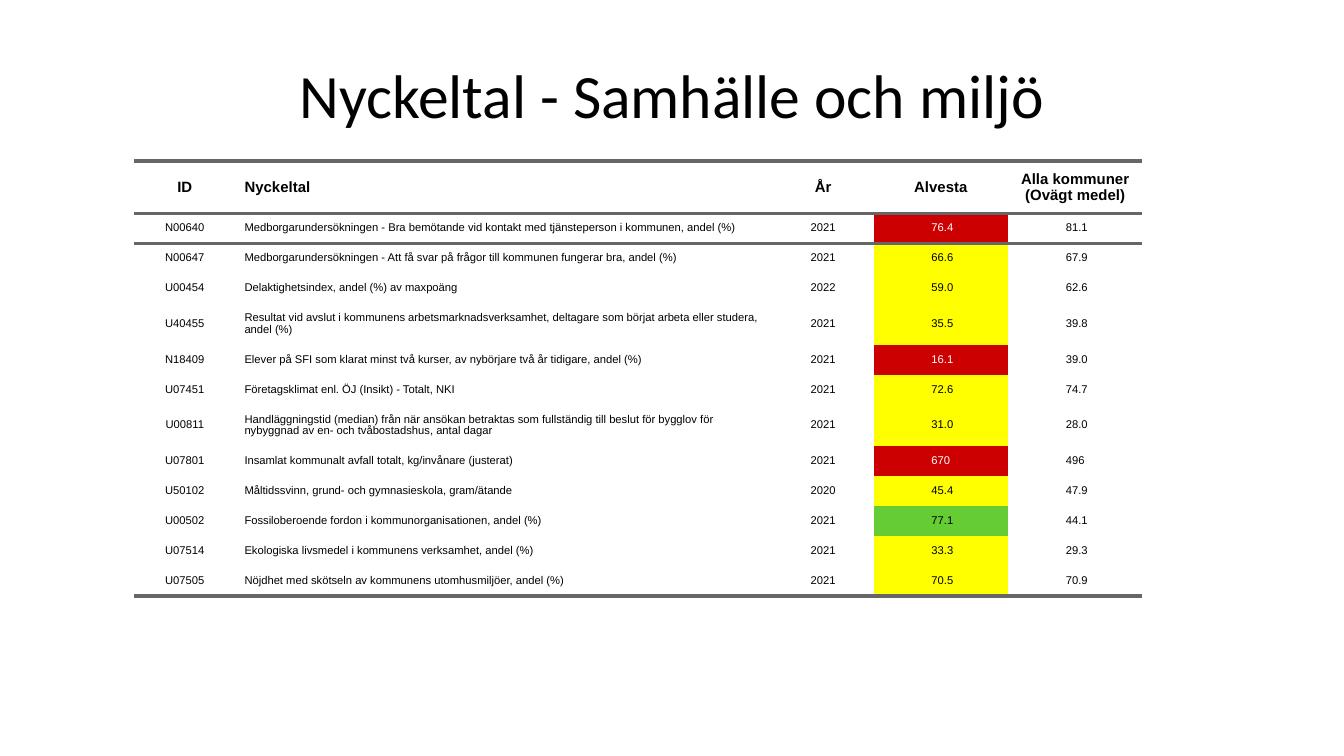
from lxml import etree
from pptx import Presentation
from pptx import util as u
from pptx.dml.color import RGBColor
from pptx.enum import text
from pptx.oxml import ns

PX = 9525  # EMU, 96 px to the inch
BLACK, WHITE, GRAY = "000000", "FFFFFF", "666666"
RED, YELLOW, GREEN = "CC0000", "FFFF00", "66CC33"
PADDING = u.Pt(5)
NO_STYLE_NO_GRID = "{2D5ABB26-0587-4C30-8999-92F81FD0307C}"

COLUMN_WIDTHS = [72, 384, 72, 96, 96]
NAME_COLUMN, RATED_COLUMN = 1, 3
HEADER_HEIGHT, ROW_HEIGHT, TALL_ROW_HEIGHT = 37, 21, 29
LINE_LENGTH = 100  # longer names take two lines

HEADER = ["ID", "Nyckeltal", "År", "Alvesta", "Alla kommuner (Ovägt medel)"]
INDICATORS = [
    ("N00640", "Medborgarundersökningen - Bra bemötande vid kontakt med tjänsteperson i kommunen, andel (%)",
     "2021", " 76.4", " 81.1", RED),
    ("N00647", "Medborgarundersökningen - Att få svar på frågor till kommunen fungerar bra, andel (%)",
     "2021", " 66.6", " 67.9", YELLOW),
    ("U00454", "Delaktighetsindex, andel (%) av maxpoäng", "2022", " 59.0", " 62.6", YELLOW),
    ("U40455", "Resultat vid avslut i kommunens arbetsmarknadsverksamhet, deltagare som börjat arbeta "
     "eller studera, andel (%)", "2021", " 35.5", " 39.8", YELLOW),
    ("N18409", "Elever på SFI som klarat minst två kurser, av nybörjare två år tidigare, andel (%)",
     "2021", " 16.1", " 39.0", RED),
    ("U07451", "Företagsklimat enl. ÖJ (Insikt) - Totalt, NKI", "2021", " 72.6", " 74.7", YELLOW),
    ("U00811", "Handläggningstid (median) från när ansökan betraktas som fullständig till beslut för "
     "bygglov för nybyggnad av en- och tvåbostadshus, antal dagar", "2021", " 31.0", " 28.0", YELLOW),
    ("U07801", "Insamlat kommunalt avfall totalt, kg/invånare (justerat)", "2021", "670", "496", RED),
    ("U50102", "Måltidssvinn, grund- och gymnasieskola, gram/ätande", "2020", " 45.4", " 47.9", YELLOW),
    ("U00502", "Fossiloberoende fordon i kommunorganisationen, andel (%)", "2021", " 77.1", " 44.1", GREEN),
    ("U07514", "Ekologiska livsmedel i kommunens verksamhet, andel (%)", "2021", " 33.3", " 29.3", YELLOW),
    ("U07505", "Nöjdhet med skötseln av kommunens utomhusmiljöer, andel (%)", "2021", " 70.5", " 70.9", YELLOW),
]


def color(hex_value):
    return RGBColor.from_string(hex_value)


def format_runs(paragraph, font_name, size, hex_value, bold=False):
    for run in paragraph.runs:
        run.font.name = font_name
        run.font.size = u.Pt(size)
        run.font.bold = bold
        run.font.color.rgb = color(hex_value)


def add_title(slide, wording):
    title = slide.shapes.title
    title.left, title.top, title.width, title.height = (n * PX for n in (48, 22, 864, 90))
    title.text_frame.text = wording
    title.text_frame.vertical_anchor = text.MSO_ANCHOR.MIDDLE
    paragraph = title.text_frame.paragraphs[0]
    paragraph.alignment = text.PP_ALIGN.CENTER
    format_runs(paragraph, "Calibri", 33, BLACK)


def add_border(cell, side):
    """Draw a rule on one side of a cell: lnT or lnB, before any fill is set."""
    properties = cell._tc.get_or_add_tcPr()
    line = etree.SubElement(properties, ns.qn(f"a:{side}"), w=str(u.Pt(2)))
    fill = etree.SubElement(line, ns.qn("a:solidFill"))
    etree.SubElement(fill, ns.qn("a:srgbClr"), val=GRAY)


def fill_cell(cell, wording, centered, size, hex_value, fill=None, bold=False):
    cell.margin_left = cell.margin_right = 0
    cell.margin_top = cell.margin_bottom = PADDING
    cell.vertical_anchor = text.MSO_ANCHOR.MIDDLE
    cell.text_frame.text = wording
    paragraph = cell.text_frame.paragraphs[0]
    paragraph.alignment = text.PP_ALIGN.CENTER if centered else text.PP_ALIGN.LEFT
    paragraph.space_before = paragraph.space_after = PADDING
    paragraph.line_spacing = 1.0 if bold else 0.9
    for margin in ("marL", "marR"):
        paragraph._p.get_or_add_pPr().set(margin, str(PADDING))
    format_runs(paragraph, "Arial", size, hex_value, bold)
    if fill:
        cell.fill.solid()
        cell.fill.fore_color.rgb = color(fill)
    else:
        cell.fill.background()


def add_indicator_table(slide):
    heights = [HEADER_HEIGHT] + [
        TALL_ROW_HEIGHT if len(row[NAME_COLUMN]) > LINE_LENGTH else ROW_HEIGHT
        for row in INDICATORS
    ]
    frame = slide.shapes.add_table(
        len(heights), len(COLUMN_WIDTHS), 96 * PX, 115 * PX,
        sum(COLUMN_WIDTHS) * PX, sum(heights) * PX)
    table = frame.table
    table.first_row = table.horz_banding = False
    table._tbl.tblPr.find(ns.qn("a:tableStyleId")).text = NO_STYLE_NO_GRID
    for column, width in zip(table.columns, COLUMN_WIDTHS):
        column.width = width * PX
    for row, height in zip(table.rows, heights):
        row.height = height * PX

    last_row = len(INDICATORS)
    for index in range(len(COLUMN_WIDTHS)):
        for row, side in ((0, "lnT"), (0, "lnB"), (1, "lnT"), (last_row, "lnB")):
            add_border(table.cell(row, index), side)
        centered = index != NAME_COLUMN
        fill_cell(table.cell(0, index), HEADER[index], centered, 8, BLACK, bold=True)
        for row, indicator in enumerate(INDICATORS, start=1):
            rating = indicator[-1] if index == RATED_COLUMN else None
            font_color = WHITE if rating == RED else BLACK
            fill_cell(table.cell(row, index), indicator[index], centered, 6, font_color, rating)


def main():
    presentation = Presentation()
    presentation.slide_width, presentation.slide_height = 960 * PX, 540 * PX
    slide = presentation.slides.add_slide(presentation.slide_layouts[5])
    add_title(slide, "Nyckeltal - Samhälle och miljö")
    add_indicator_table(slide)
    presentation.save("out.pptx")


if __name__ == "__main__":
    main()
